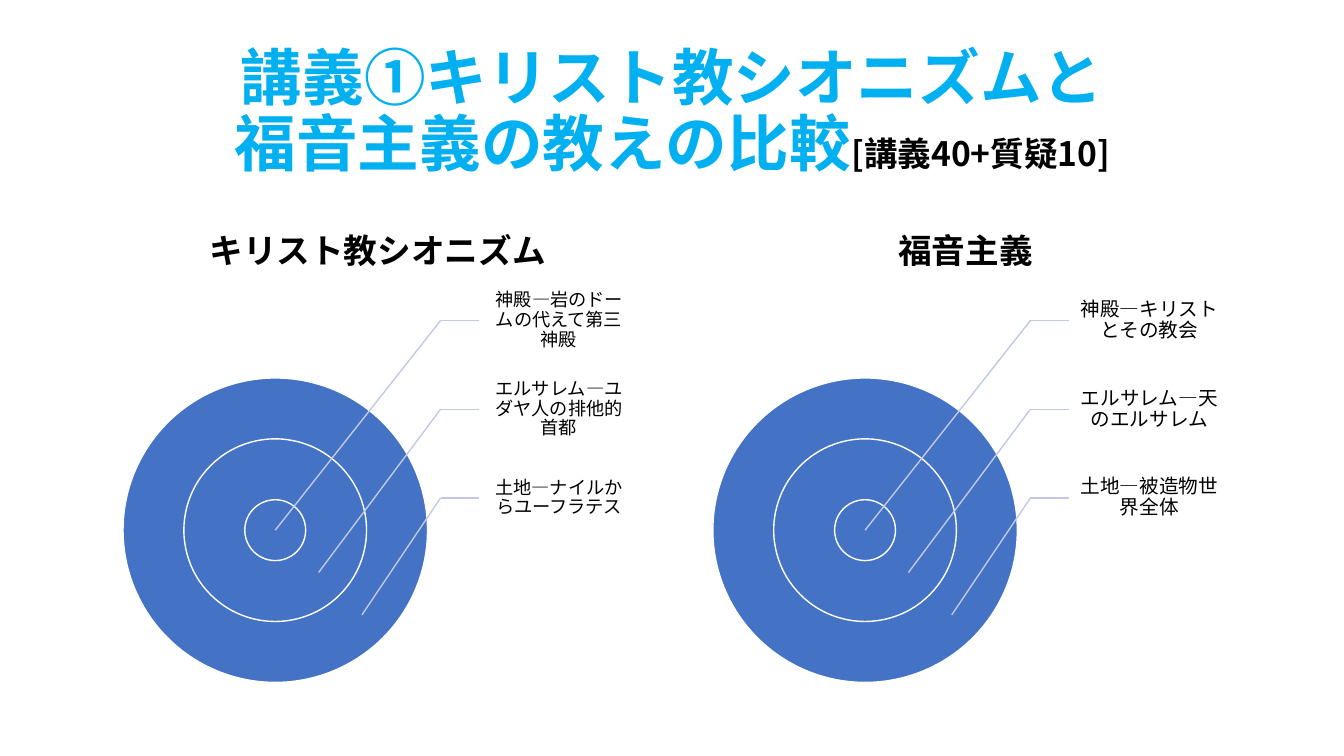
from lxml.etree import SubElement
from pptx import Presentation
from pptx.dml.color import RGBColor
from pptx.enum.shapes import MSO_CONNECTOR, MSO_SHAPE
from pptx.enum.text import MSO_ANCHOR, PP_ALIGN
from pptx.oxml.ns import qn
from pptx.util import Inches, Pt

COLORS = {"title": "00B0F0", "text": "000000", "disc": "4472C4", "ring": "FFFFFF", "leader": "C1C9E4"}
FONT = "Noto Sans CJK JP"

presentation = Presentation()
presentation.slide_width = Inches(13.33)
presentation.slide_height = Inches(7.5)
slide = presentation.slides.add_slide(presentation.slide_layouts[6])


def add_text(shapes, box, runs, anchor, bold):
    shape = shapes.add_textbox(*[Inches(length) for length in box])
    frame = shape.text_frame
    frame.word_wrap = True
    frame.vertical_anchor = anchor
    paragraph = frame.paragraphs[0]
    paragraph.alignment = PP_ALIGN.CENTER
    paragraph.line_spacing = 0.9
    for text, size, color in runs:
        if text == "\v":
            paragraph.add_line_break()
            continue
        run = paragraph.add_run()
        run.text = text
        run.font.size = Pt(size)
        run.font.bold = bold
        run.font.name = FONT
        run.font.color.rgb = RGBColor.from_string(COLORS[color])
        SubElement(run.font._element, qn("a:ea"), typeface=FONT)
    return shape


def add_leader(shapes, start, end):
    points = [Inches(length) for length in (*start, *end)]
    leader = shapes.add_connector(MSO_CONNECTOR.STRAIGHT, *points)
    leader.line.color.rgb = RGBColor.from_string(COLORS["leader"])
    leader.line.width = Pt(1)
    SubElement(leader._element.spPr, qn("a:effectLst"))
    return leader


title_runs = [
    ("講義①キリスト教シオニズムと", 44, "title"),
    ("\v", 44, "title"),
    ("福音主義の教えの比較", 44, "title"),
    ("[講義40+質疑10]", 24, "text"),
]
add_text(slide.shapes, (0.92, 0.4, 11.5, 1.45), title_runs, MSO_ANCHOR.MIDDLE, True)

columns = [
    (0.92, 1.22, "キリスト教シオニズム", 13, 0.1,
     ["神殿―岩のドームの代えて第三神殿", "エルサレム―ユダヤ人の排他的首都", "土地―ナイルからユーフラテス"]),
    (6.75, 7.07, "福音主義", 14, 0.11,
     ["神殿―キリストとその教会", "エルサレム―天のエルサレム", "土地―被造物世界全体"]),
]
diameter = 3.02
disc_top = 3.75
center_y = disc_top + diameter / 2
label_top, label_width, label_height = 2.74, 1.51, 0.88

for heading_left, disc_left, heading, label_size, label_inset, labels in columns:
    add_text(slide.shapes, (heading_left, 1.84, 5.65, 0.9), [(heading, 24, "text")], MSO_ANCHOR.BOTTOM, True)
    center_x = disc_left + diameter / 2
    label_left = disc_left + 3.53
    elbow_x = label_left - 0.38
    diagram = slide.shapes.add_group_shape().shapes

    for share in (1, 0.6, 0.2):
        size = diameter * share
        box = (center_x - size / 2, center_y - size / 2, size, size)
        disc = diagram.add_shape(MSO_SHAPE.OVAL, *[Inches(length) for length in box])
        disc.shadow.inherit = False
        disc.fill.solid()
        disc.fill.fore_color.rgb = RGBColor.from_string(COLORS["disc"])
        disc.line.color.rgb = RGBColor.from_string(COLORS["ring"])
        disc.line.width = Pt(1)

    for row, text in enumerate(labels):
        top = label_top + row * label_height
        label = add_text(diagram, (label_left, top, label_width, label_height),
                         [(text, label_size, "text")], MSO_ANCHOR.MIDDLE, False)
        frame = label.text_frame
        frame.margin_left = Inches(label_inset)
        frame.margin_top = frame.margin_right = frame.margin_bottom = Inches(0.02)
        elbow = (elbow_x, top + label_height / 2)
        add_leader(diagram, elbow, (label_left, elbow[1])).end_connect(label, 1)
        add_leader(diagram, elbow, (center_x + row * 0.43, center_y + row * 0.42))

presentation.save("out.pptx")
